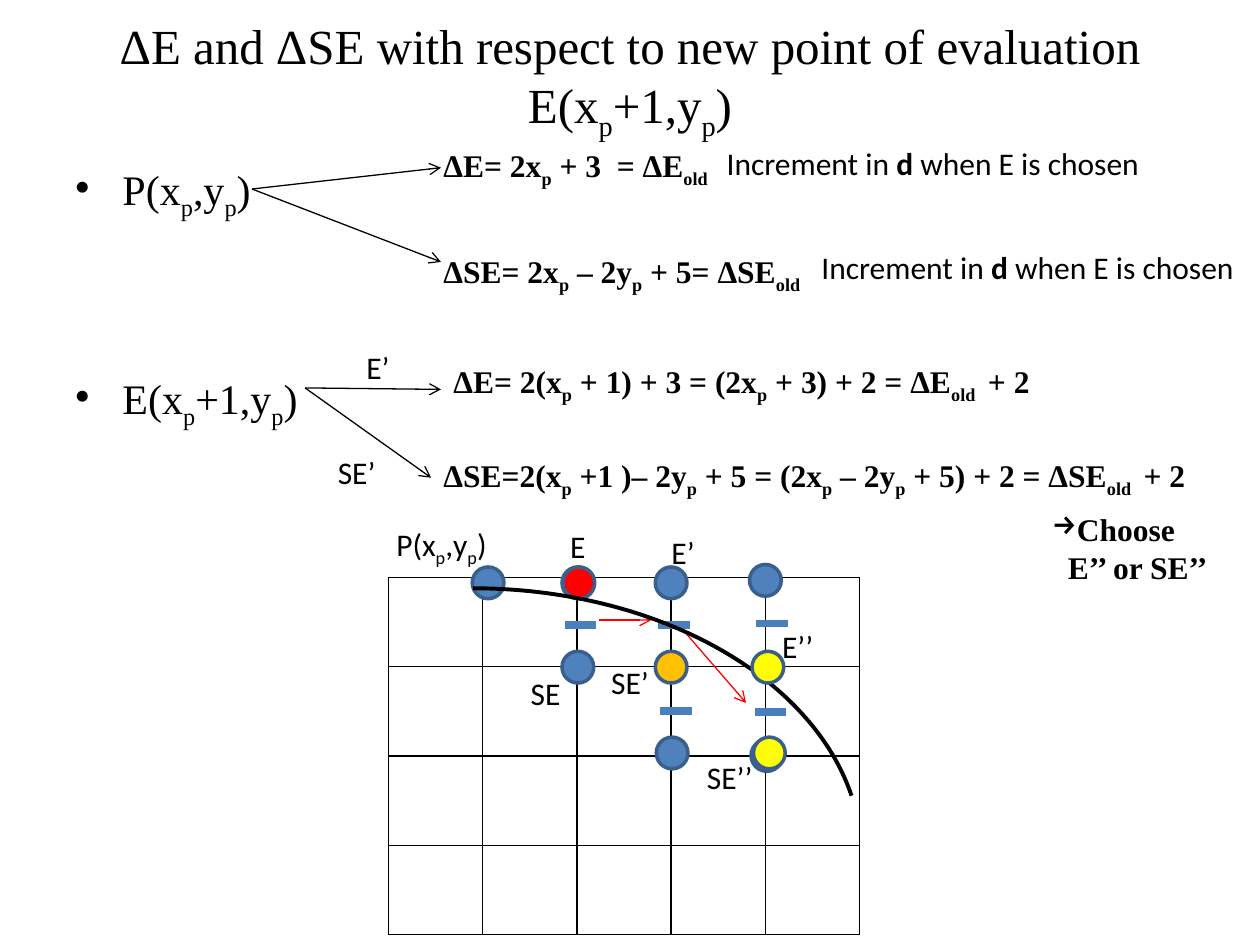
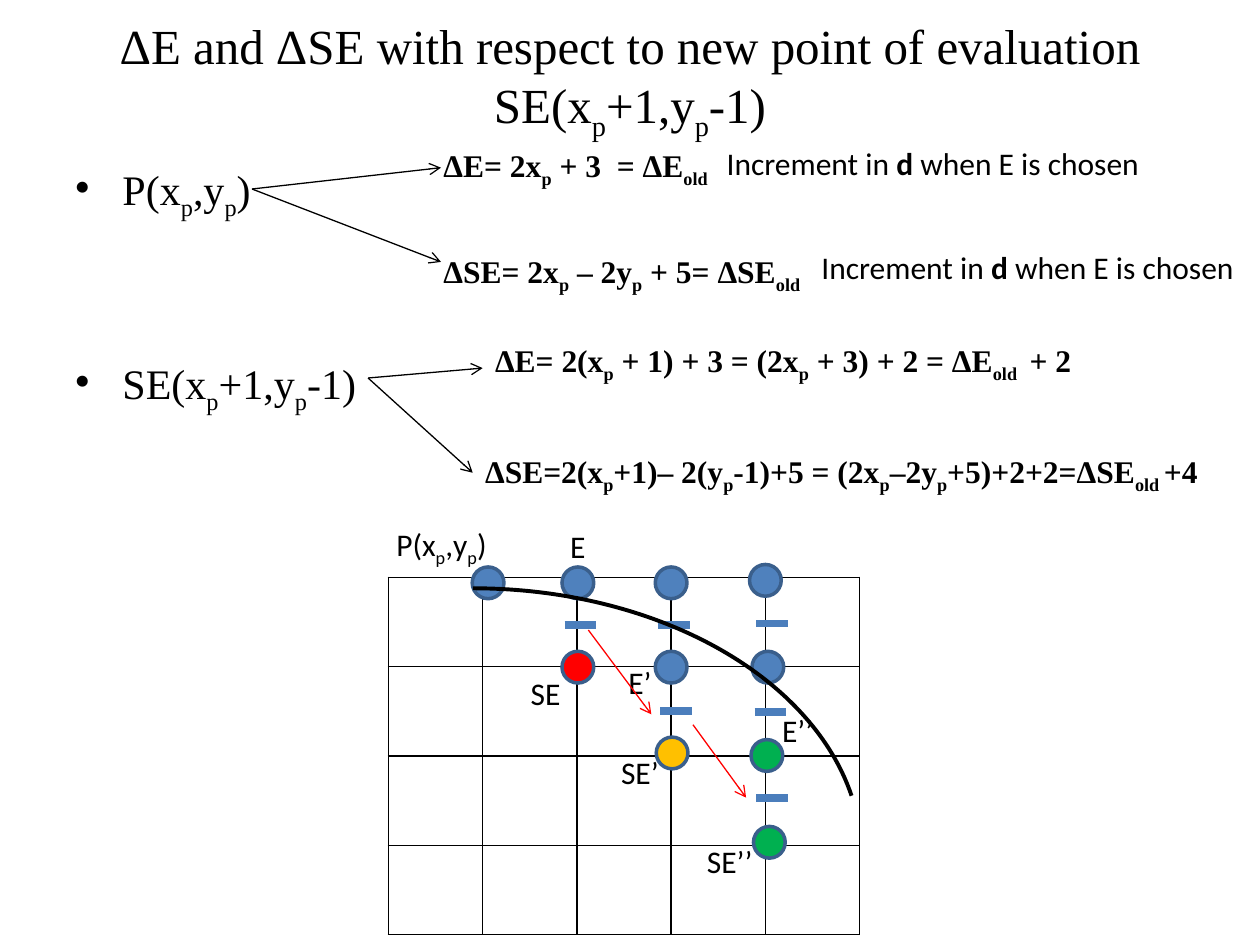
from lxml.etree import SubElement
from pptx import Presentation
from pptx.dml.color import RGBColor
from pptx.enum.shapes import MSO_CONNECTOR as CONNECTOR, MSO_SHAPE as SHAPE
from pptx.enum.text import MSO_ANCHOR as ANCHOR, MSO_AUTO_SIZE as AUTO_SIZE, PP_ALIGN as ALIGN
from pptx.oxml.ns import qn
from pptx.util import Cm, Pt

COLORS = {
    "ink": "000000",
    "pixel": "4F81BD",
    "pixel_edge": "3A5F8C",
    "midpoint": "4B7EBC",
    "move": "FF0000",
    "current": "FF0000",
    "next": "FFC000",
    "east_choice": "FFFF00",
    "southeast_choice": "00B050",
}
SERIF, SANS = "Times New Roman", "Calibri"
TITLE_ONLY = 5

# Raster: pixel centres by (column, row), in cm
GRID_LEFT, GRID_TOP, COLUMN_WIDTH, ROW_HEIGHT = 7.83, 11.64, 1.9, 1.8
COLUMNS, ROWS = 5, 4
PIXEL_SIZE = 0.64
PIXELS = {
    (1, 0): (9.84, 11.75), (2, 0): (11.65, 11.75), (3, 0): (13.53, 11.75), (4, 0): (15.43, 11.7),
    (2, 1): (11.65, 13.45), (3, 1): (13.53, 13.45), (4, 1): (15.48, 13.45),
    (3, 2): (13.55, 15.18), (4, 2): (15.46, 15.23), (4, 3): (15.51, 16.98),
}
# Left end of each midpoint mark
MIDPOINTS = [(11.38, 12.6), (13.26, 12.6), (13.31, 14.33), (15.24, 12.57), (15.21, 14.36)]


def rgb(name):
    return RGBColor.from_string(COLORS[name])


def add_runs(paragraph, text, font, size, bold=False, mark="sub"):
    """Parts between bars become subscripts, or bold when mark is "bold"."""
    for index, part in enumerate(text.split("|")):
        if not part:
            continue
        run = paragraph.add_run()
        run.text = part
        run.font.name, run.font.size = font, Pt(size)
        run.font.color.rgb = rgb("ink")
        marked = index % 2 == 1
        run.font.bold = bold or (marked and mark == "bold")
        if marked and mark == "sub":
            run._r.get_or_add_rPr().set("baseline", "-25000")


def set_indent(paragraph, margin, hanging=0, bullet=None):
    properties = paragraph._p.get_or_add_pPr()
    properties.set("marL", str(Cm(margin)))
    properties.set("indent", str(-Cm(hanging)))
    if bullet:
        SubElement(properties, qn("a:buChar")).set("char", bullet)


def add_frame(slide, left, top, width, height, anchor=ANCHOR.MIDDLE):
    frame = slide.shapes.add_textbox(Cm(left), Cm(top), Cm(width), Cm(height)).text_frame
    frame.word_wrap = True
    frame.vertical_anchor = anchor
    return frame


def add_title(slide, text):
    title = slide.shapes.title
    title.left, title.top, title.width, title.height = Cm(1.27), Cm(0), Cm(22.86), Cm(3.18)
    frame = title.text_frame
    frame.auto_size = AUTO_SIZE.NONE
    frame.vertical_anchor = ANCHOR.MIDDLE
    frame.paragraphs[0].alignment = ALIGN.CENTER
    add_runs(frame.paragraphs[0], text, SERIF, 28)


def add_bullets(slide, first, second, gap):
    frame = add_frame(slide, 1.27, 3.18, 22.86, 13.84, ANCHOR.TOP)
    for paragraph, text, space in ((frame.paragraphs[0], first, 4.8),
                                   (frame.add_paragraph(), second, gap)):
        paragraph.space_before = Pt(space)
        set_indent(paragraph, 0.95, 0.95, "•")
        add_runs(paragraph, text, SERIF, 24)


def add_formula(slide, text, left, top, width=15.88, height=1.07):
    frame = add_frame(slide, left, top, width, height)
    add_runs(frame.paragraphs[0], text, SERIF, 18, bold=True)


def add_increment_note(slide, left, top, width):
    frame = add_frame(slide, left, top, width, 1.47)
    add_runs(frame.paragraphs[0], "Increment in |d| when E is chosen", SANS, 18, mark="bold")


def add_label(slide, text, x, y, width=1.5):
    height = 0.84
    frame = add_frame(slide, x - width / 2, y - height / 2, width, height)
    frame.paragraphs[0].alignment = ALIGN.CENTER
    add_runs(frame.paragraphs[0], text, SANS, 18)


def add_line(slide, start, end, color="ink", weight=0.75, arrow=True):
    line = slide.shapes.add_connector(CONNECTOR.STRAIGHT, *map(Cm, start + end))
    line.line.color.rgb = rgb(color)
    line.line.width = Pt(weight)
    if arrow:
        SubElement(line.line._get_or_add_ln(), qn("a:tailEnd")).set("type", "arrow")
    SubElement(line._element.spPr, qn("a:effectLst"))


def add_fork(slide, start, *ends):
    for end in ends:
        add_line(slide, start, end)


def add_midpoint(slide, x, y):
    add_line(slide, (x, y), (x + PIXEL_SIZE, y), "midpoint", 4.5, arrow=False)


def add_pixel(slide, center, fill="pixel"):
    x, y = center
    pixel = slide.shapes.add_shape(SHAPE.OVAL, Cm(x - PIXEL_SIZE / 2), Cm(y - PIXEL_SIZE / 2),
                                   Cm(PIXEL_SIZE), Cm(PIXEL_SIZE))
    pixel.shadow.inherit = False
    pixel.fill.solid()
    pixel.fill.fore_color.rgb = rgb(fill)
    pixel.line.color.rgb = rgb("pixel_edge")
    pixel.line.width = Pt(2)


def add_circle_arc(slide):
    arc = slide.shapes.add_shape(SHAPE.ARC, Cm(1.7), Cm(11.86), Cm(15.67), Cm(10.8))
    arc.adjustments[0], arc.adjustments[1] = 162, 210.56
    arc.shadow.inherit = False
    arc.fill.background()
    arc.line.color.rgb = rgb("ink")
    arc.line.width = Pt(2.25)


def add_raster(slide):
    raster = slide.shapes.add_table(ROWS, COLUMNS, Cm(GRID_LEFT), Cm(GRID_TOP),
                                    Cm(COLUMNS * COLUMN_WIDTH), Cm(ROWS * ROW_HEIGHT)).table
    raster.first_row = raster.horz_banding = False
    for cell in raster.iter_cells():
        properties = cell._tc.get_or_add_tcPr()
        for side in ("a:lnL", "a:lnR", "a:lnT", "a:lnB"):
            border = SubElement(properties, qn(side), w=str(Pt(1)))
            fill = SubElement(border, qn("a:solidFill"))
            SubElement(fill, qn("a:srgbClr")).set("val", COLORS["ink"])
        cell.fill.background()


def add_known_increments(slide):
    """The two increments at P, the same on every slide."""
    add_fork(slide, (5.08, 3.81), (8.89, 3.38), (8.89, 5.28))
    add_formula(slide, "ΔE= 2x|p| + 3  = ΔE|old|", 8.69, 2.74, 10.59, 1.27)
    add_formula(slide, "ΔSE= 2x|p| – 2y|p| + 5= ΔSE|old|", 8.69, 4.88, 10.8, 1.27)
    add_increment_note(slide, 14.4, 2.54, 9.73)
    add_increment_note(slide, 16.31, 4.65, 9.09)


def add_pixel_map(slide, positions, fills, midpoints):
    add_raster(slide)
    for position in positions:
        add_pixel(slide, PIXELS[position], fills.get(position, "pixel"))
    for midpoint in midpoints:
        add_midpoint(slide, *midpoint)
    add_label(slide, "P(x|p|,y|p|)", 8.9, 11.01, 2.97)
    add_label(slide, "E", 11.65, 11.01)
    add_label(slide, "SE", 11, 13.96)


def start_slide(deck, point, bullet_gap):
    slide = deck.slides.add_slide(deck.slide_layouts[TITLE_ONLY])
    add_title(slide, "ΔE and ΔSE with respect to new point of evaluation " + point)
    add_bullets(slide, "P(x|p|,y|p|)", point, bullet_gap)
    add_known_increments(slide)
    return slide


def add_next_choice(slide):
    frame = add_frame(slide, 20.96, 10.16, 3.78, 1.8, ANCHOR.TOP)
    choose, options = frame.paragraphs[0], frame.add_paragraph()
    set_indent(choose, 0, bullet="→")
    set_indent(options, 0.32)
    add_runs(choose, "Choose", SERIF, 18, bold=True)
    add_runs(options, "E’’ or SE’’", SERIF, 18, bold=True)


def build_east_slide(deck):
    slide = start_slide(deck, "E(x|p|+1,y|p|)", 86.5)

    # Increments after moving east
    add_fork(slide, (6.15, 7.82), (8.89, 7.85), (8.69, 9.63))
    add_formula(slide, "ΔE= 2(x|p| + 1) + 3 = (2x|p| + 3) + 2 = ΔE|old | + 2", 8.89, 7.19)
    add_formula(slide, "ΔSE=2(x|p| +1 )– 2y|p| + 5 = (2x|p| – 2y|p| + 5) + 2 = ΔSE|old | + 2",
                8.69, 9.09)
    add_label(slide, "E’", 7.62, 7.4)
    add_label(slide, "SE’", 7.19, 9.51)
    add_next_choice(slide)

    # Pixel map
    positions = [position for position in PIXELS if position not in ((4, 1), (4, 3))]
    add_pixel_map(slide, positions, {(3, 1): "next"}, MIDPOINTS)
    add_pixel(slide, (11.67, 11.75), "current")
    for text, x, y in (("E’", 13.77, 11.13), ("SE’", 12.7, 13.75),
                       ("E’’", 16.08, 13.03), ("SE’’", 14.71, 15.66)):
        add_label(slide, text, x, y)
    add_line(slide, (13.77, 12.7), (15.04, 14.17), "move")
    add_line(slide, (12.07, 12.5), (13.13, 12.5), "move")
    add_circle_arc(slide)
    for center in (PIXELS[4, 1], (15.51, 15.18)):
        add_pixel(slide, center, "east_choice")


def build_southeast_slide(deck):
    slide = start_slide(deck, "SE(x|p|+1,y|p|-1)", 78)

    # Increments after moving southeast
    add_fork(slide, (7.42, 7.62), (9.73, 7.42), (9.53, 9.53))
    add_formula(slide, "ΔE= 2(x|p| + 1) + 3 = (2x|p| + 3) + 2 = ΔE|old | + 2", 9.73, 6.78)
    add_formula(slide, "ΔSE=2(x|p|+1)– 2(y|p|-1)+5 = (2x|p|–2y|p|+5)+2+2=ΔSE|old |+4",
                9.53, 8.69, height=1.7)

    # Pixel map
    fills = {(2, 1): "current", (3, 2): "next",
             (4, 2): "southeast_choice", (4, 3): "southeast_choice"}
    add_pixel_map(slide, PIXELS, fills, MIDPOINTS + [(15.24, 16.08)])
    for text, x, y in (("E’", 12.9, 13.75), ("SE’", 12.9, 15.57),
                       ("E’’", 16.08, 14.71), ("SE’’", 14.71, 17.36)):
        add_label(slide, text, x, y)
    add_line(slide, (11.86, 12.7), (13.13, 14.4), "move")
    add_line(slide, (13.97, 14.61), (15.04, 16.08), "move")
    add_circle_arc(slide)


def main():
    deck = Presentation()
    deck.slide_width, deck.slide_height = Cm(25.4), Cm(19.05)
    build_east_slide(deck)
    build_southeast_slide(deck)
    deck.save("out.pptx")


if __name__ == "__main__":
    main()
